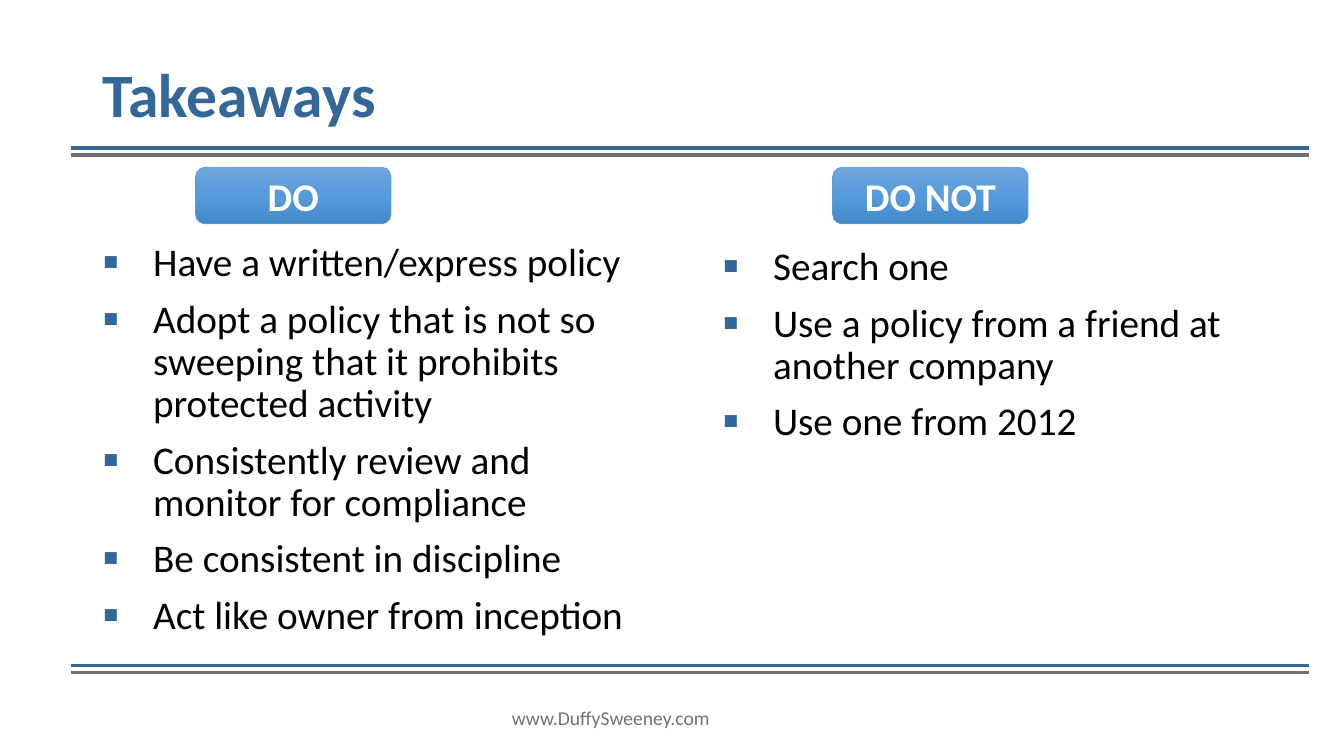
from copy import deepcopy

from lxml import etree
from pptx import Presentation
from pptx import util as u
from pptx.dml import color
from pptx.enum import shapes, text
from pptx.oxml import ns

COLORS = {
    "blue": "336699",
    "gray": "767171",
    "black": "000000",
    "white": "FFFFFF",
    "edge": "5B9BD5",
}
BUTTON_GRADIENT = [(0, "71A6DB"), (0.5, "559BDB"), (1, "448ACA")]
FONT = "Calibri"

RULE_LEFT, RULE_RIGHT = 50.4, 935.3
RULE_GAP = 5
RULE_TOPS = [105.8, 475.2]

COLUMNS = [
    {
        "heading": "DO",
        "button_left": 139.7,
        "list_area": (66.2, 169.9, 408.2, 301.7),
        "items": [
            "Have a written/express policy",
            "Adopt a policy that is not so sweeping that it prohibits protected activity",
            "Consistently review and monitor for compliance",
            "Be consistent in discipline",
            "Act like owner from inception",
        ],
    },
    {
        "heading": "DO NOT",
        "button_left": 594.7,
        "list_area": (509, 172.8, 408.2, 298.1),
        "items": [
            "Search one",
            "Use a policy from a friend at another company",
            "Use one from 2012",
        ],
    },
]


def rgb(name):
    return color.RGBColor.from_string(COLORS[name])


def write(para, content, size=28, ink="black", bold=False,
          align=text.PP_ALIGN.LEFT, spacing=None, before=0):
    para.alignment = align
    para.line_spacing = spacing
    para.space_before = u.Pt(before)
    span = para.add_run()
    span.text = content
    span.font.name = FONT
    span.font.size = u.Pt(size)
    span.font.bold = bold
    span.font.color.rgb = rgb(ink)


class TakeawaysSlide:
    def __init__(self, deck):
        self.page = deck.slides.add_slide(deck.slide_layouts[3])

    def place(self, box, left, top, width, height):
        box.left, box.top = u.Pt(left), u.Pt(top)
        box.width, box.height = u.Pt(width), u.Pt(height)

    def prepare(self, box, anchor):
        frame = box.text_frame
        frame.word_wrap = True
        frame.auto_size = text.MSO_AUTO_SIZE.NONE
        frame.vertical_anchor = anchor
        return frame

    def title(self, content, area):
        box = self.page.shapes.title
        self.place(box, *area)
        frame = self.prepare(box, text.MSO_ANCHOR.BOTTOM)
        write(frame.paragraphs[0], content, size=44, ink="blue", bold=True, spacing=0.9)

    def bullet(self, para):
        props = para._p.get_or_add_pPr()
        props.set("marL", str(u.Pt(36)))
        props.set("indent", str(u.Pt(-36)))
        tint = etree.SubElement(props, ns.qn("a:buClr"))
        etree.SubElement(tint, ns.qn("a:srgbClr"), val=COLORS["blue"])
        etree.SubElement(props, ns.qn("a:buSzPct"), val="120000")
        etree.SubElement(props, ns.qn("a:buFont"), typeface=FONT)
        etree.SubElement(props, ns.qn("a:buChar"), char="▪")

    def bullets(self, box, items, area):
        self.place(box, *area)
        frame = self.prepare(box, text.MSO_ANCHOR.TOP)
        for index, item in enumerate(items):
            para = frame.add_paragraph() if index else frame.paragraphs[0]
            self.bullet(para)
            write(para, item, spacing=0.9, before=10 if index else 0)

    def button(self, content, area):
        box = self.page.shapes.add_shape(
            shapes.MSO_SHAPE.ROUNDED_RECTANGLE, *map(u.Pt, area))
        box.shadow.inherit = False
        box.fill.gradient()
        box.fill.gradient_angle = 270
        stops = box._element.spPr.find(ns.qn("a:gradFill")).find(ns.qn("a:gsLst"))
        stops.insert(1, deepcopy(stops[0]))
        for stop, (position, tint) in zip(box.fill.gradient_stops, BUTTON_GRADIENT):
            stop.position = position
            stop.color.rgb = color.RGBColor.from_string(tint)
        box.line.color.rgb = rgb("edge")
        box.line.width = u.Pt(0.5)
        frame = self.prepare(box, text.MSO_ANCHOR.MIDDLE)
        write(frame.paragraphs[0], content, ink="white", bold=True,
              align=text.PP_ALIGN.CENTER)

    def rule(self, top, ink):
        line = self.page.shapes.add_connector(
            shapes.MSO_CONNECTOR.STRAIGHT,
            u.Pt(RULE_LEFT), u.Pt(top), u.Pt(RULE_RIGHT), u.Pt(top))
        line.line.color.rgb = rgb(ink)
        line.line.width = u.Pt(2.5)
        etree.SubElement(line._element.spPr, ns.qn("a:effectLst"))

    def double_rule(self, top):
        self.rule(top, "blue")
        self.rule(top + RULE_GAP, "gray")

    def caption(self, content, area):
        box = self.page.shapes.add_textbox(*map(u.Pt, area))
        frame = self.prepare(box, text.MSO_ANCHOR.MIDDLE)
        write(frame.paragraphs[0], content, size=14, ink="gray",
              align=text.PP_ALIGN.CENTER)


def main():
    deck = Presentation()
    deck.slide_width, deck.slide_height = u.Pt(960), u.Pt(540)
    slide = TakeawaysSlide(deck)
    slide.title("Takeaways", (66.2, 10.8, 828, 86.4))
    for top in RULE_TOPS:
        slide.double_rule(top)
    for number, column in enumerate(COLUMNS, start=1):
        body = slide.page.placeholders[number]
        slide.bullets(body, column["items"], column["list_area"])
        slide.button(column["heading"], (column["button_left"], 119.5, 139.7, 40.3))
    slide.caption("www.DuffySweeney.com", (330.5, 498.2, 211.7, 28.8))
    deck.save("out.pptx")


if __name__ == "__main__":
    main()
